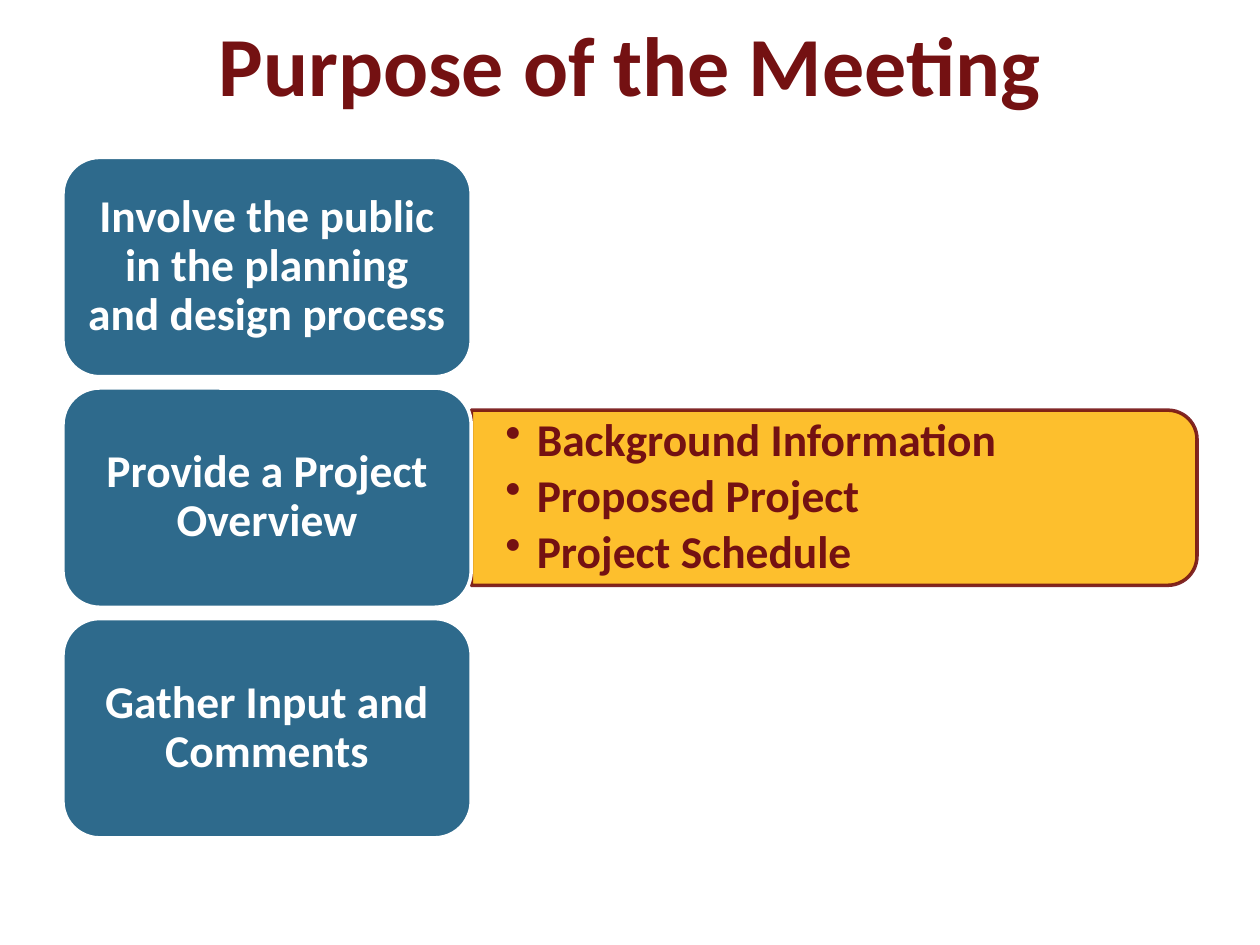
import pptx
import pptx.dml.color
import pptx.enum.shapes
import pptx.enum.text
import pptx.oxml.ns
import pptx.util
import lxml.etree

Inches = pptx.util.Inches
Pt = pptx.util.Pt
Shapes = pptx.enum.shapes.MSO_SHAPE
Align = pptx.enum.text.PP_ALIGN
qn = pptx.oxml.ns.qn

COLORS = {"maroon": "741112", "blue": "2E6A8C", "gold": "FDB917", "white": "FFFFFF"}


class MeetingSlide:
    font_name = "Calibri"
    body_size = 26
    line_width = 2

    def __init__(self, slide):
        self.slide = slide

    def color(self, name):
        return pptx.dml.color.RGBColor.from_string(COLORS[name])

    def set_frame(self, shape, horizontal, vertical):
        frame = shape.text_frame
        frame.word_wrap = True
        frame.vertical_anchor = pptx.enum.text.MSO_ANCHOR.MIDDLE
        frame.margin_left = frame.margin_right = Inches(horizontal)
        frame.margin_top = frame.margin_bottom = Inches(vertical)
        return frame

    def add_text(self, paragraph, text, size, color, align, line_spacing=0.9):
        paragraph.alignment = align
        paragraph.line_spacing = line_spacing
        run = paragraph.add_run()
        run.text = text
        run.font.name = self.font_name
        run.font.size = Pt(size)
        run.font.bold = True
        run.font.color.rgb = self.color(color)

    def add_box(self, kind, left, top, width, height, fill, line):
        shape = self.slide.shapes.add_shape(
            kind, Inches(left), Inches(top), Inches(width), Inches(height))
        shape.shadow.inherit = False
        shape.fill.solid()
        shape.fill.fore_color.rgb = self.color(fill)
        shape.line.color.rgb = self.color(line)
        shape.line.width = Pt(self.line_width)
        return shape

    def add_title(self, text):
        box = self.slide.shapes.add_textbox(Inches(0.5), 0, Inches(9), Inches(1))
        frame = self.set_frame(box, 0.1, 0.05)
        self.add_text(frame.paragraphs[0], text, 48, "maroon", Align.CENTER, 1.0)

    def add_card(self, text, left, top, width, height):
        card = self.add_box(Shapes.ROUNDED_RECTANGLE, left, top, width, height,
                            "blue", "white")
        frame = self.set_frame(card, 0.1, 0.05)
        self.add_text(frame.paragraphs[0], text, self.body_size, "white", Align.CENTER)

    def add_panel(self, left, top, width, height):
        panel = self.add_box(Shapes.ROUND_2_SAME_RECTANGLE,
                             left + (width - height) / 2, top + (height - width) / 2,
                             height, width, "gold", "maroon")
        panel.rotation = 90
        for color in panel._element.spPr.iter(qn("a:srgbClr")):
            lxml.etree.SubElement(color, qn("a:alpha"), val="90000")

    def add_bullets(self, items, left, top, width, height):
        box = self.slide.shapes.add_textbox(
            Inches(left), Inches(top), Inches(width), Inches(height))
        frame = self.set_frame(box, 0.27, 0.14)
        for index, item in enumerate(items):
            paragraph = frame.add_paragraph() if index else frame.paragraphs[0]
            properties = paragraph._p.get_or_add_pPr()
            properties.set("marL", str(Inches(0.25)))
            properties.set("indent", str(-Inches(0.25)))
            lxml.etree.SubElement(properties, qn("a:buChar"), char="•")
            self.add_text(paragraph, item, self.body_size, "maroon", Align.LEFT)
            paragraph.space_after = Pt(3.9)


def main():
    presentation = pptx.Presentation()
    presentation.slide_width = Inches(10)
    presentation.slide_height = Inches(7.5)
    page = MeetingSlide(presentation.slides.add_slide(presentation.slide_layouts[6]))

    page.add_title("Purpose of the Meeting")
    left, top, width, height, gap = 0.5, 1.25, 3.24, 1.74, 0.09
    panel_left = left + width
    panel_height = 1.39
    panel_top = top + height + gap + (height - panel_height) / 2
    page.add_panel(panel_left, panel_top, 5.76, panel_height)
    page.add_bullets(
        ["Background Information", "Proposed Project", "Project Schedule"],
        panel_left, panel_top + 0.07, 5.69, 1.25)

    purposes = [
        "Involve the public in the planning and design process",
        "Provide a Project Overview",
        "Gather Input and Comments",
    ]
    for row, purpose in enumerate(purposes):
        page.add_card(purpose, left, top + row * (height + gap), width, height)

    presentation.save("out.pptx")


if __name__ == "__main__":
    main()
